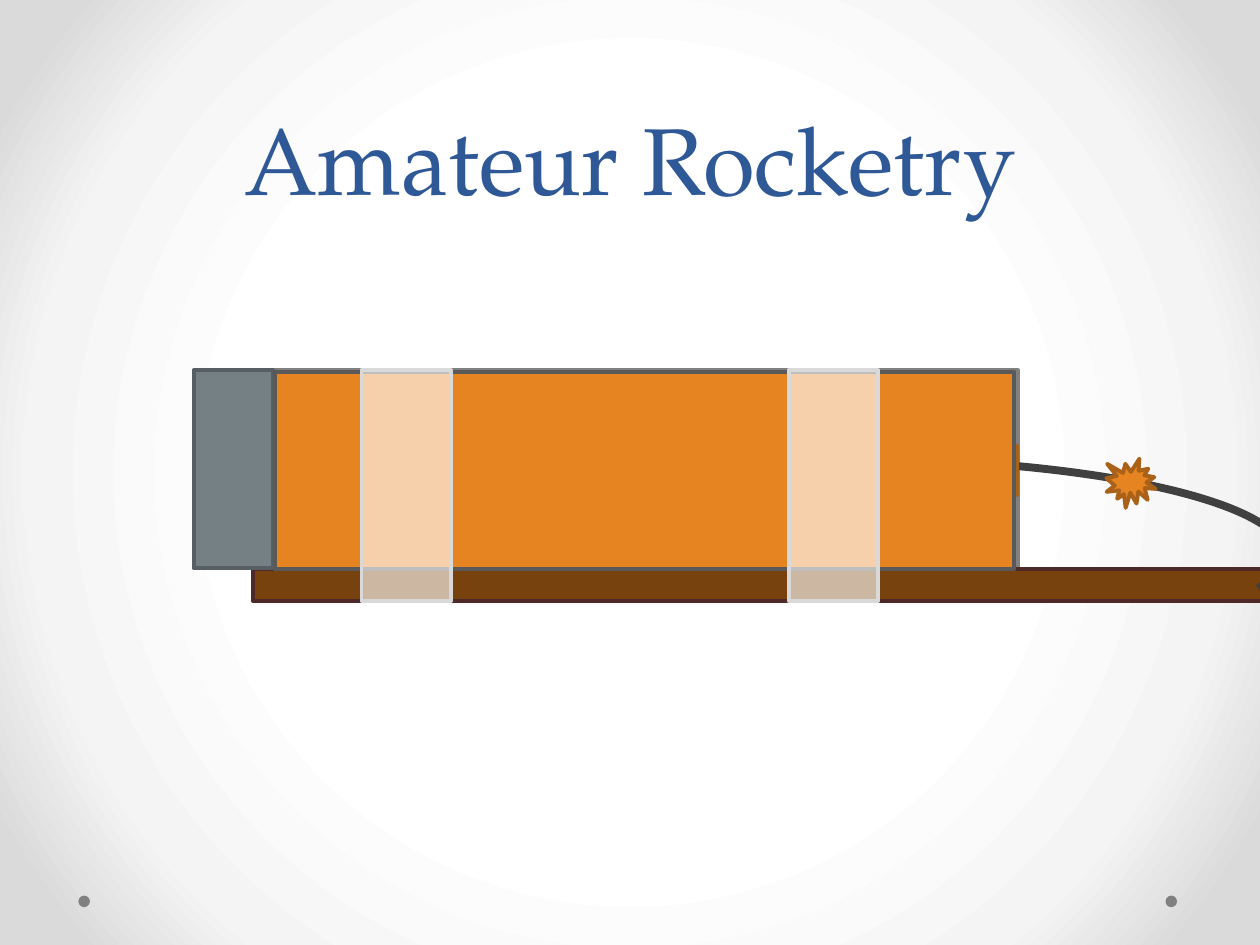
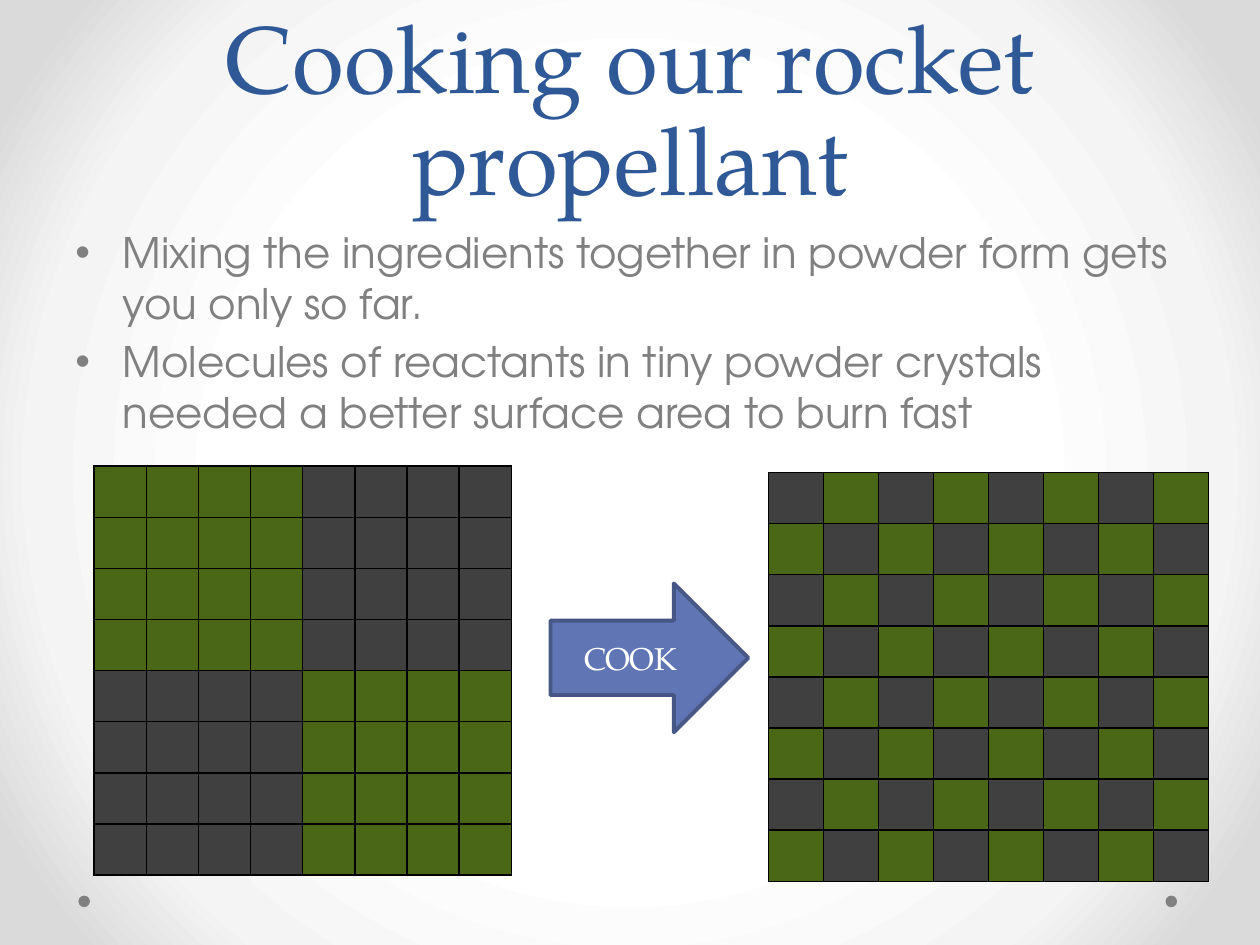
from dataclasses import dataclass
from typing import Callable, Optional

import pptx
import pptx.dml.color
import pptx.enum.shapes
import pptx.enum.text
import pptx.oxml
import pptx.oxml.ns
import pptx.presentation
import pptx.shapes.autoshape
import pptx.slide
import pptx.table
import pptx.text.text
import pptx.util
from lxml import etree

Pt = pptx.util.Pt
RGBColor = pptx.dml.color.RGBColor
Kind = pptx.enum.shapes.MSO_SHAPE
Anchor = pptx.enum.text.MSO_ANCHOR
Align = pptx.enum.text.PP_ALIGN
qn = pptx.oxml.ns.qn

SERIF = "TeX Gyre Pagella"
SANS = "TeX Gyre Adventor"

TITLE_BLUE = RGBColor(0x2F, 0x58, 0x97)
GREY = RGBColor(0x80, 0x80, 0x80)
WHITE = RGBColor(0xFF, 0xFF, 0xFF)
BLACK = RGBColor(0x00, 0x00, 0x00)
CHARCOAL = RGBColor(0x40, 0x40, 0x40)
GREEN = RGBColor(0x4A, 0x67, 0x17)
ORANGE = RGBColor(0xE6, 0x84, 0x22)
DARK_ORANGE = RGBColor(0xAA, 0x62, 0x19)
PALE_GREY = RGBColor(0xF2, 0xF2, 0xF2)
WOOD = RGBColor(0x77, 0x42, 0x0D)
WOOD_EDGE = RGBColor(0x4E, 0x29, 0x29)
STEEL = RGBColor(0x75, 0x80, 0x85)
STEEL_EDGE = RGBColor(0x57, 0x5F, 0x62)
CASING_EDGE = RGBColor(0x59, 0x59, 0x59)
TAPE_EDGE = RGBColor(0xD9, 0xD9, 0xD9)
ARROW_BLUE = RGBColor(0x60, 0x76, 0xB4)
ARROW_EDGE = RGBColor(0x47, 0x57, 0x85)
BACKGROUND_STOPS = (
    (50, WHITE),
    (76, RGBColor(0xF4, 0xF4, 0xF4)),
    (92, RGBColor(0xDA, 0xDA, 0xDA)),
)


@dataclass(frozen=True)
class Box:
    left: float
    top: float
    width: float
    height: float

    def lengths(self) -> tuple:
        return Pt(self.left), Pt(self.top), Pt(self.width), Pt(self.height)


@dataclass(frozen=True)
class Part:
    kind: Kind
    box: Box
    fill: Optional[RGBColor] = None
    line: Optional[RGBColor] = None
    line_width: float = 2.25
    opacity: int = 100
    adjustments: tuple = ()


@dataclass(frozen=True)
class CrystalGrid:
    box: Box
    size: int
    colour_at: Callable[[int, int], RGBColor]


TITLE_BOX = Box(36, 0, 648, 126)
BODY_BOX = Box(36, 126, 648, 356.4)
CORNER_DOTS = [
    Part(Kind.OVAL, Box(left, 511.8, 6.6, 6.6), GREY) for left in (666, 44.8)
]
ROCKET_PARTS = [
    Part(Kind.RECTANGLE, Box(110.9, 211.7, 470.9, 113), PALE_GREY, GREY),
    Part(Kind.RECTANGLE, Box(144.7, 325.4, 907.2, 18), WOOD, WOOD_EDGE),
    Part(Kind.ARC, Box(235.4, 262.1, 499, 110.2), None, CHARCOAL, 4.5,
         adjustments=(116.595, 2.795)),
    Part(Kind.EXPLOSION1, Box(632.2, 262.1, 28.1, 28.1), ORANGE, DARK_ORANGE),
    Part(Kind.RECTANGLE, Box(195.8, 254.9, 385.2, 28.1), ORANGE, DARK_ORANGE),
    Part(Kind.RECTANGLE, Box(110.9, 211.7, 45.4, 113), STEEL, STEEL_EDGE),
    Part(Kind.RECTANGLE, Box(157, 212.4, 422.6, 113), ORANGE, CASING_EDGE),
] + [
    Part(Kind.RECTANGLE, Box(left, 211.7, 51.1, 131.8), WHITE, TAPE_EDGE, opacity=62)
    for left in (206.6, 450.7)
]
COOK_ARROW = Part(
    Kind.RIGHT_ARROW, Box(314.6, 333.4, 113, 85), ARROW_BLUE, ARROW_EDGE
)

BLOCK_WIDTH, BLOCK_HEIGHT = 119.2, 116.8
POWDER_BLOCKS = [
    CrystalGrid(
        Box(53.8 + column * BLOCK_WIDTH, 266.4 + row * BLOCK_HEIGHT,
            BLOCK_WIDTH, BLOCK_HEIGHT),
        4,
        lambda _row, _column, colour=colour: colour,
    )
    for row, column, colour in (
        (1, 0, CHARCOAL), (1, 1, GREEN), (0, 1, CHARCOAL), (0, 0, GREEN)
    )
]
COOKED_BLOCK = CrystalGrid(
    Box(439.2, 270, 251.3, 233.6),
    8,
    lambda row, column: GREEN if (row + column) % 2 else CHARCOAL,
)
BULLETS = (
    "Mixing the ingredients together in powder form gets you only so far.",
    "Molecules of reactants in tiny powder crystals needed a better surface area to burn fast",
)


def set_background(presentation: pptx.presentation.Presentation) -> None:
    master = presentation.slide_master
    master.background.fill.gradient()
    gradient = master.element.find(".//" + qn("p:bg")).find(".//" + qn("a:gradFill"))
    for child in list(gradient):
        gradient.remove(child)
    stops = etree.SubElement(gradient, qn("a:gsLst"))
    for position, colour in BACKGROUND_STOPS:
        stop = etree.SubElement(stops, qn("a:gs"), pos=str(position * 1000))
        etree.SubElement(stop, qn("a:srgbClr"), val=str(colour))
    circle = etree.SubElement(gradient, qn("a:path"), {"path": "circle"})
    etree.SubElement(
        circle, qn("a:fillToRect"), {side: "50000" for side in "ltrb"}
    )


def add_part(slide: pptx.slide.Slide, part: Part) -> pptx.shapes.autoshape.Shape:
    shape = slide.shapes.add_shape(part.kind, *part.box.lengths())
    shape.shadow.inherit = False
    for index, value in enumerate(part.adjustments):
        shape.adjustments[index] = value
    if part.fill is None:
        shape.fill.background()
    else:
        shape.fill.solid()
        shape.fill.fore_color.rgb = part.fill
    if part.opacity < 100:
        colour = shape.element.spPr.find(qn("a:solidFill")).find(qn("a:srgbClr"))
        etree.SubElement(colour, qn("a:alpha"), val=str(part.opacity * 1000))
    if part.line is None:
        shape.line.fill.background()
    else:
        shape.line.color.rgb = part.line
        shape.line.width = Pt(part.line_width)
    return shape


def add_run(paragraph: pptx.text.text._Paragraph, text: str, font: str,
            size: float, colour: RGBColor) -> None:
    run = paragraph.add_run()
    run.text = text
    run.font.name = font
    run.font.size = Pt(size)
    run.font.color.rgb = colour


def add_text_frame(slide: pptx.slide.Slide, box: Box) -> pptx.text.text.TextFrame:
    frame = slide.shapes.add_textbox(*box.lengths()).text_frame
    frame.word_wrap = True
    return frame


def add_titled_slide(presentation: pptx.presentation.Presentation,
                     title: str) -> pptx.slide.Slide:
    slide = presentation.slides.add_slide(presentation.slide_layouts[6])
    for dot in CORNER_DOTS:
        add_part(slide, dot)
    frame = add_text_frame(slide, TITLE_BOX)
    frame.vertical_anchor = Anchor.BOTTOM
    paragraph = frame.paragraphs[0]
    paragraph.alignment = Align.CENTER
    paragraph.line_spacing = Pt(58)
    add_run(paragraph, title, SERIF, 54, TITLE_BLUE)
    return slide


def add_bullets(slide: pptx.slide.Slide) -> None:
    frame = add_text_frame(slide, BODY_BOX)
    for index, text in enumerate(BULLETS):
        paragraph = frame.add_paragraph() if index else frame.paragraphs[0]
        if index:
            paragraph.space_before = Pt(4.8)
        properties = paragraph._p.get_or_add_pPr()
        properties.set("marL", str(Pt(27)))
        properties.set("indent", str(-Pt(27)))
        etree.SubElement(properties, qn("a:buFont"), typeface="Arial")
        etree.SubElement(properties, qn("a:buChar"), char="•")
        add_run(paragraph, text, SANS, 24, GREY)


def style_cell(cell: pptx.table._Cell, colour: RGBColor) -> None:
    cell.margin_left = cell.margin_right = cell.margin_top = cell.margin_bottom = 0
    properties = cell._tc.get_or_add_tcPr()
    for side in ("lnL", "lnR", "lnT", "lnB"):
        border = etree.SubElement(properties, qn(f"a:{side}"), w=str(Pt(1)))
        fill = etree.SubElement(border, qn("a:solidFill"))
        etree.SubElement(fill, qn("a:srgbClr"), val=str(BLACK))
    cell.fill.solid()
    cell.fill.fore_color.rgb = colour


def add_grid(slide: pptx.slide.Slide, grid: CrystalGrid) -> None:
    table = slide.shapes.add_table(grid.size, grid.size, *grid.box.lengths()).table
    table.first_row = table.horz_banding = False
    for column in table.columns:
        column.width = Pt(grid.box.width / grid.size)
    for row_index, row in enumerate(table.rows):
        row.height = Pt(grid.box.height / grid.size)
        for column_index, cell in enumerate(row.cells):
            style_cell(cell, grid.colour_at(row_index, column_index))


def add_rocket_slide(presentation: pptx.presentation.Presentation) -> None:
    slide = add_titled_slide(presentation, "Amateur Rocketry")
    for part in ROCKET_PARTS:
        add_part(slide, part)


def add_cooking_slide(presentation: pptx.presentation.Presentation) -> None:
    slide = add_titled_slide(presentation, "Cooking our rocket propellant")
    add_bullets(slide)
    for block in POWDER_BLOCKS:
        add_grid(slide, block)
    frame = add_part(slide, COOK_ARROW).text_frame
    frame.word_wrap = True
    frame.vertical_anchor = Anchor.MIDDLE
    paragraph = frame.paragraphs[0]
    paragraph.alignment = Align.CENTER
    add_run(paragraph, "COOK", SERIF, 18, WHITE)
    add_grid(slide, COOKED_BLOCK)


def main() -> None:
    presentation = pptx.Presentation()
    presentation.slide_width = Pt(720)
    presentation.slide_height = Pt(540)
    set_background(presentation)
    add_rocket_slide(presentation)
    add_cooking_slide(presentation)
    presentation.save("out.pptx")


if __name__ == "__main__":
    main()
